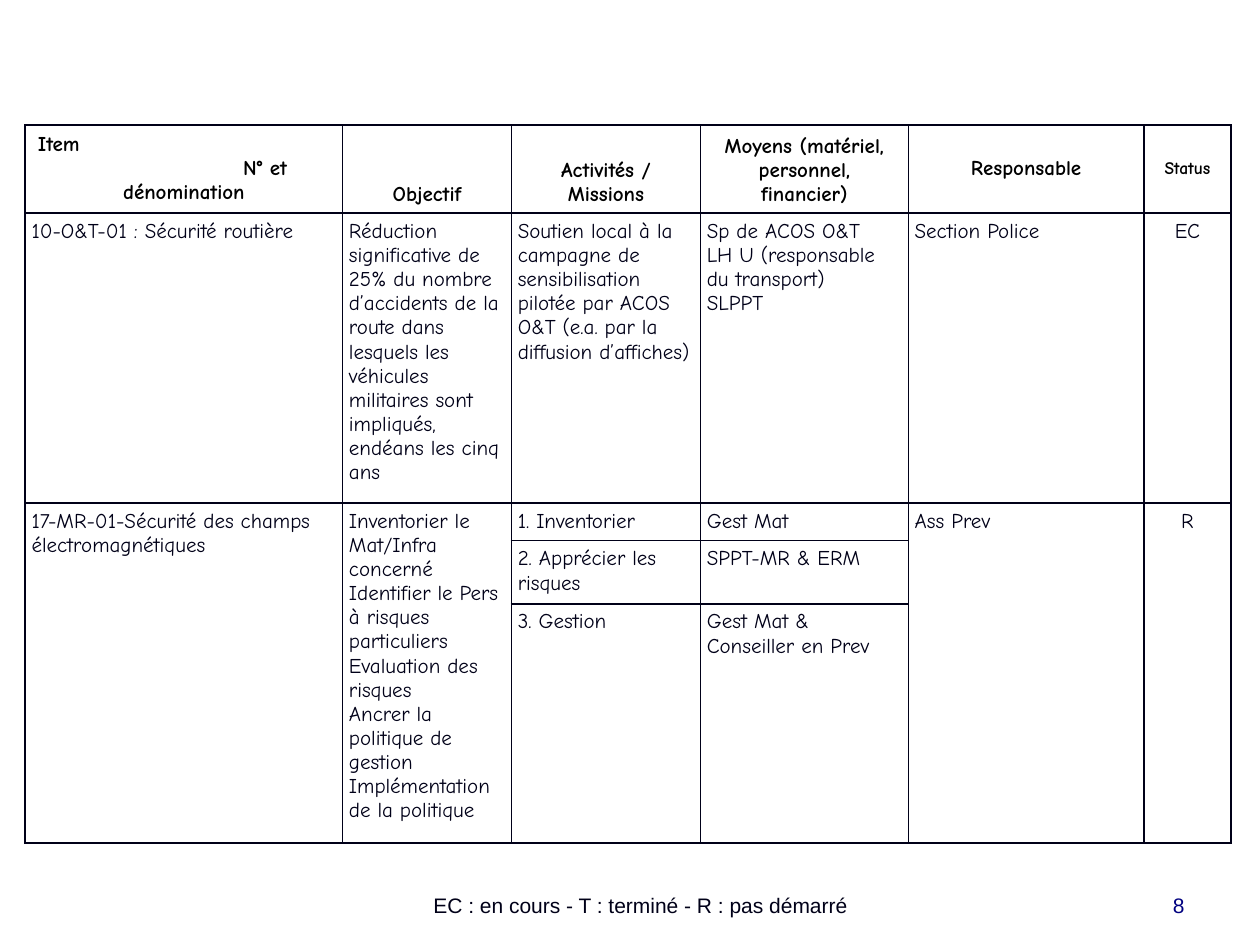
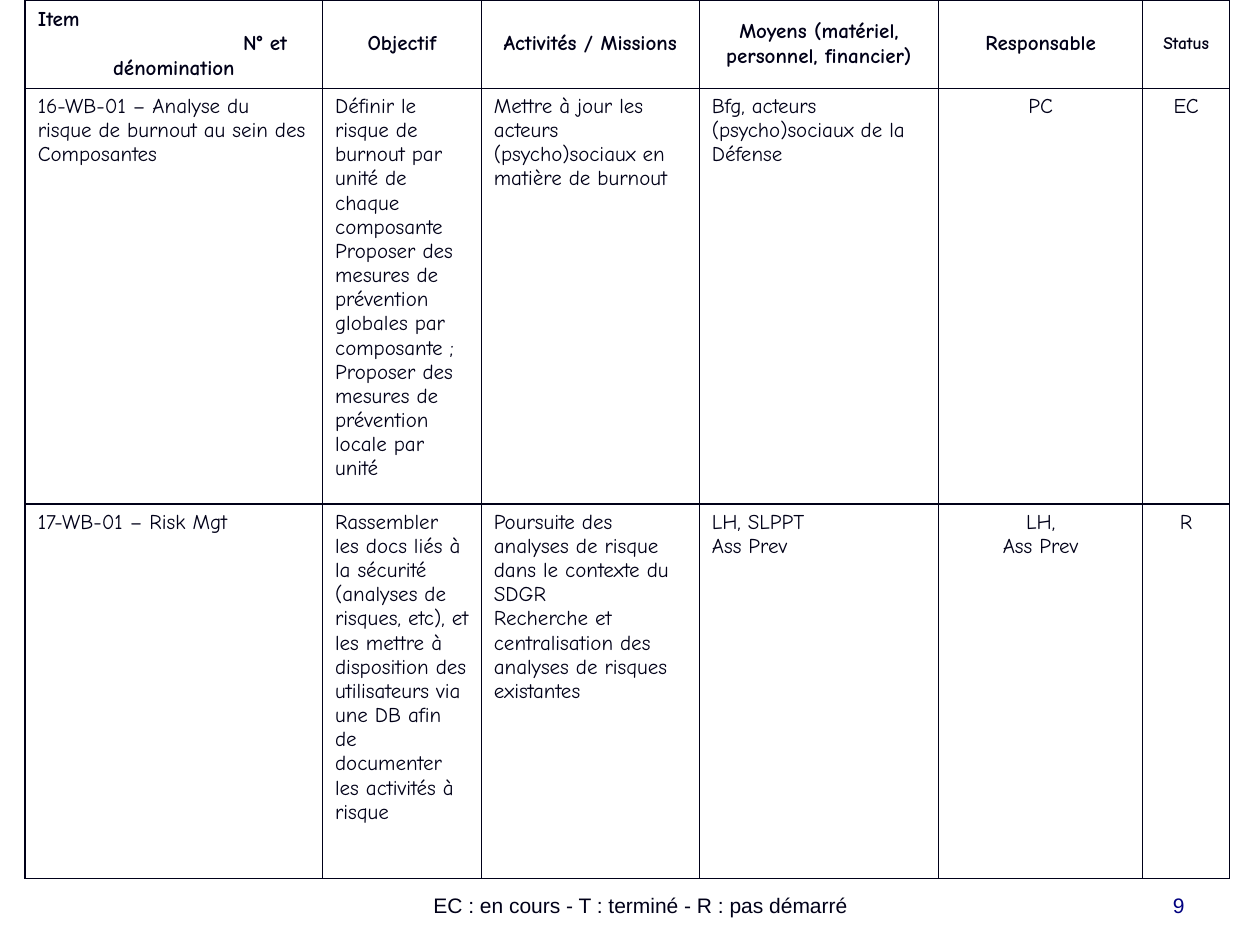
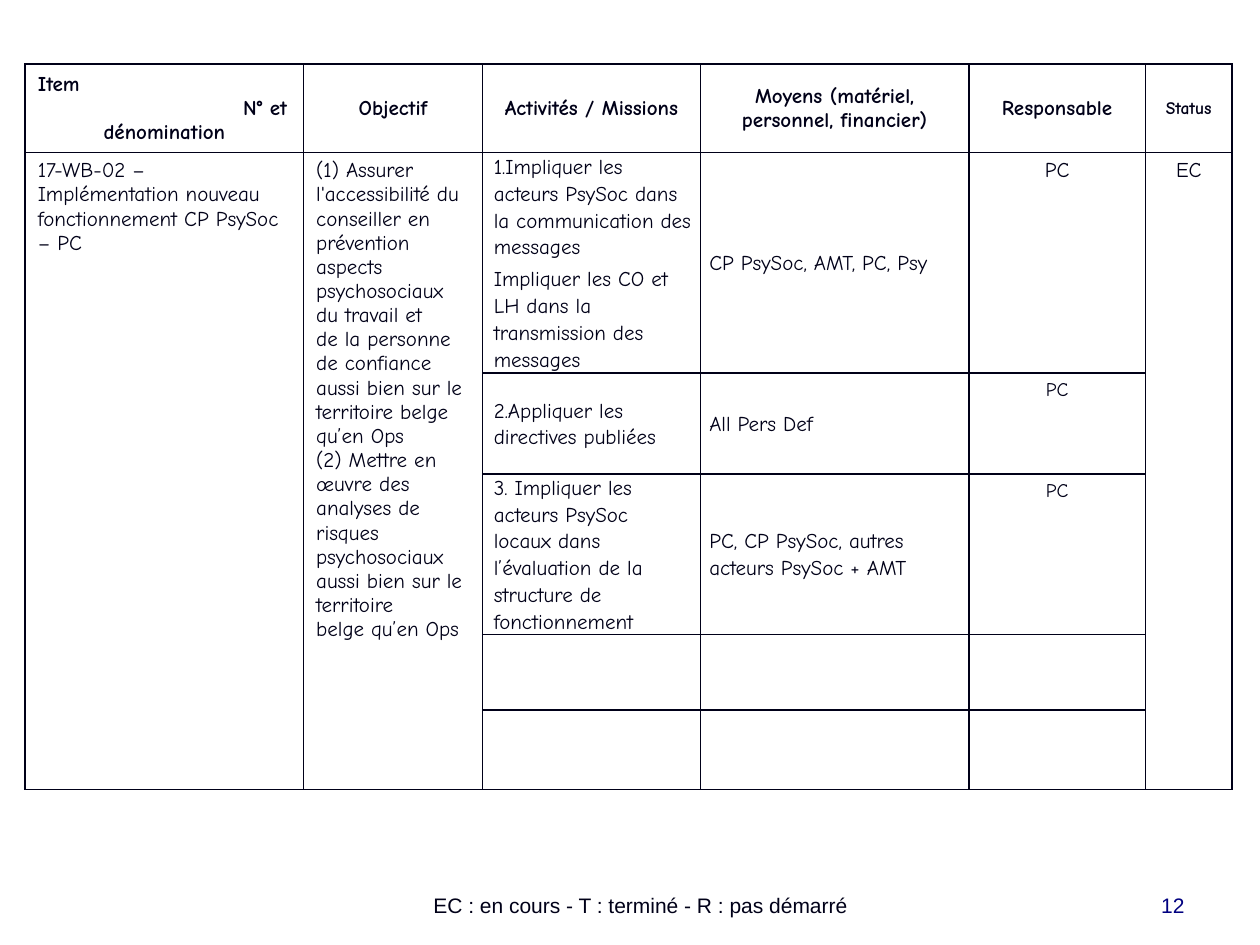
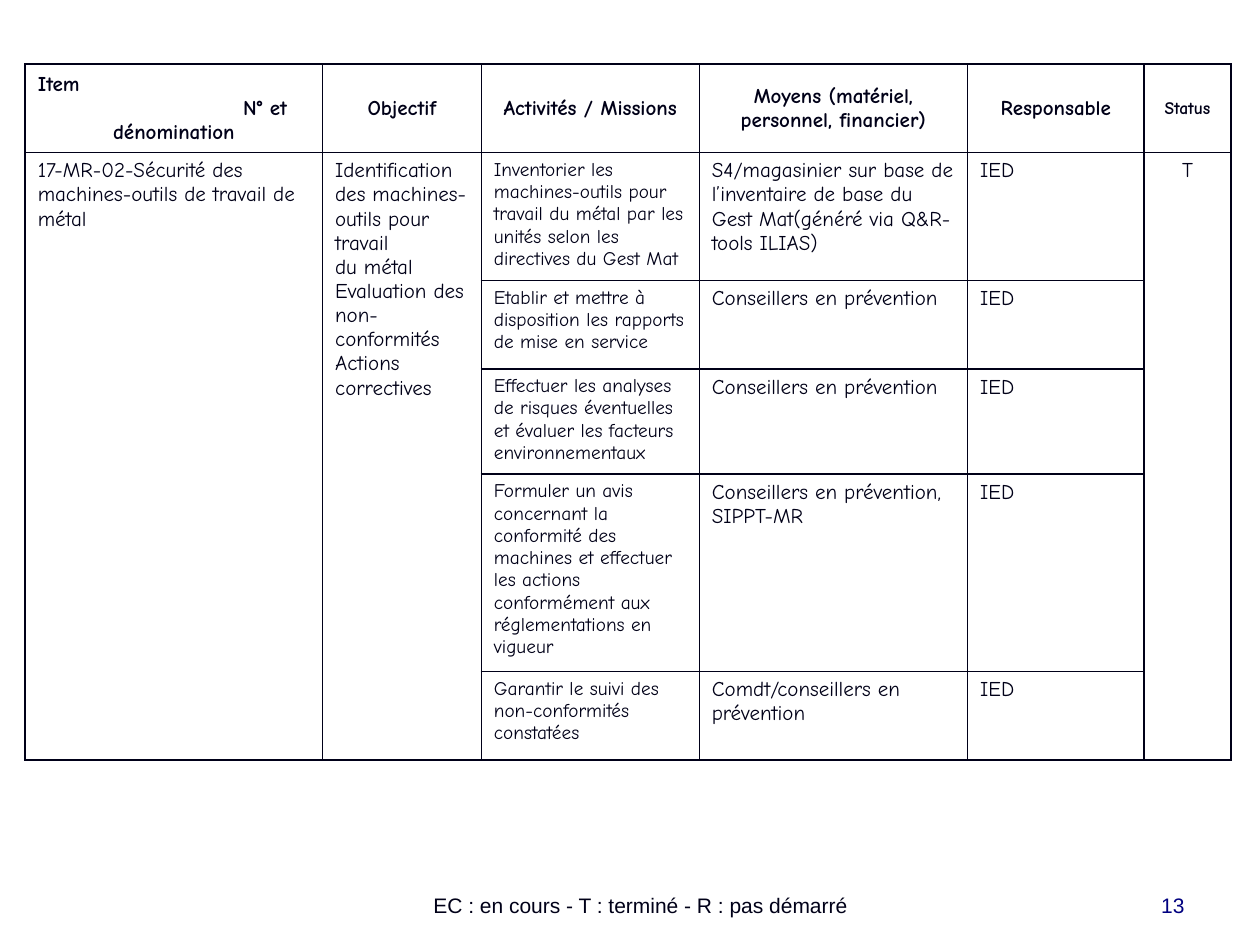
"""Build the four action-plan slides, each with one table, a legend and a page number."""
from dataclasses import dataclass, field, replace
from typing import Any, Optional

from lxml import etree
from pptx import Presentation
from pptx.dml.color import RGBColor
from pptx.enum import text
from pptx.oxml import ns
from pptx.util import Inches, Pt

INK, BLACK, NAVY, WHITE = "000018", "000000", "000080", "FFFFFF"
TABLE_FONT, FOOTER_FONT = "Comic Neue", "Arial"
LEFT, CENTER, RIGHT = text.PP_ALIGN.LEFT, text.PP_ALIGN.CENTER, text.PP_ALIGN.RIGHT
TOP, MIDDLE, BOTTOM = text.MSO_ANCHOR.TOP, text.MSO_ANCHOR.MIDDLE, text.MSO_ANCHOR.BOTTOM
TABLE_LEFT = 0.2
ITEM_INDENT = 1.63
LEGEND = "EC : en cours - T : terminé - R : pas démarré"
HEADERS = (
    "Item\nN° et\ndénomination",
    "Objectif",
    "Activités / Missions",
    "Moyens (matériel, personnel, financier)",
    "Responsable",
    "Status",
)


@dataclass(frozen=True)
class Style:
    """Describe how the text of a cell or text box looks."""

    size: float = 12
    align: Any = LEFT
    anchor: Any = TOP
    inset_x: float = 0.1
    inset_y: float = 0.05
    indent: float = 0
    leading: Optional[float] = None
    gap: float = 0
    bold: bool = False
    color: str = INK
    font: str = TABLE_FONT


BODY = Style()
CENTERED = replace(BODY, align=CENTER)
SMALL = replace(BODY, size=11)
SMALL_CENTERED = replace(CENTERED, size=11)
NARROW = replace(BODY, inset_x=0.05)
NARROW_CENTERED = replace(NARROW, align=CENTER)
LEADED = Style(anchor=MIDDLE, inset_x=0.07, inset_y=0, leading=15.3, gap=3)
LEADED_INDENTED = replace(LEADED, indent=0.02)
HEADER = Style(align=CENTER, anchor=MIDDLE, bold=True)
LEGEND_STYLE = Style(align=CENTER, anchor=BOTTOM, font=FOOTER_FONT)
PAGE_STYLE = replace(LEGEND_STYLE, align=RIGHT, color=NAVY)


@dataclass(frozen=True)
class ActionPlan:
    """Describe one slide: its page number and its table."""

    page: int
    top: float
    widths: tuple[float, ...]
    heights: tuple[float, ...]
    styles: tuple[Style, ...]
    rows: tuple[tuple[Optional[str], ...], ...]
    special: dict[tuple[int, int], Style] = field(default_factory=dict)
    header: Style = HEADER
    low_headers: tuple[int, ...] = ()


PLANS = (
    ActionPlan(
        page=8,
        top=0.99,
        widths=(2.52, 1.34, 1.5, 1.65, 1.87, 0.69),
        heights=(0.67, 2.22, 0.29, 0.49, 1.82),
        styles=(NARROW,) * 5 + (NARROW_CENTERED,),
        header=replace(HEADER, color=BLACK),
        low_headers=(1, 2, 3),
        rows=(
            (
                "10-O&T-01 : Sécurité routière",
                "Réduction significative de 25% du nombre d’accidents de la route dans "
                "lesquels les véhicules militaires sont impliqués, endéans les cinq ans",
                "Soutien local à la campagne de sensibilisation pilotée par ACOS O&T "
                "(e.a. par la diffusion d’affiches)",
                "Sp de ACOS O&T\nLH U (responsable du transport)\nSLPPT",
                "Section Police",
                "EC",
            ),
            (
                "17-MR-01-Sécurité des champs électromagnétiques",
                "Inventorier le Mat/Infra concerné\n"
                "Identifier le Pers à risques particuliers\n"
                "Evaluation des risques\n"
                "Ancrer la politique de gestion\n"
                "Implémentation de la politique",
                "1. Inventorier",
                "Gest Mat",
                "Ass Prev",
                "R",
            ),
            (None, None, "2. Apprécier les risques", "SPPT-MR & ERM", None, None),
            (None, None, "3. Gestion", "Gest Mat & Conseiller en Prev", None, None),
        ),
    ),
    ActionPlan(
        page=9,
        top=0,
        widths=(2.36, 1.26, 1.73, 1.9, 1.62, 0.69),
        heights=(0.67, 3.17, 2.97),
        styles=(BODY,) * 4 + (CENTERED,) * 2,
        rows=(
            (
                "16-WB-01 – Analyse du risque de burnout au sein des Composantes",
                "Définir le risque de burnout par unité de chaque composante Proposer des "
                "mesures de prévention globales par composante ;\n"
                "Proposer des mesures de prévention locale par unité",
                "Mettre à jour les acteurs (psycho)sociaux en matière de burnout",
                "Bfg, acteurs (psycho)sociaux de la Défense",
                "PC",
                "EC",
            ),
            (
                "17-WB-01 – Risk Mgt",
                "Rassembler les docs liés à la sécurité (analyses de risques, etc), et les "
                "mettre à disposition des utilisateurs via une DB afin de documenter les "
                "activités à risque",
                "Poursuite des analyses de risque dans le contexte du SDGR\n"
                "Recherche et centralisation des analyses de risques existantes",
                "LH, SLPPT\nAss Prev",
                "LH,\nAss Prev",
                "R",
            ),
        ),
    ),
    ActionPlan(
        page=12,
        top=0.51,
        widths=(2.21, 1.42, 1.73, 2.13, 1.4, 0.69),
        heights=(0.67, 1.75, 0.8, 1.27, 0.6, 0.63),
        styles=(BODY, BODY, LEADED_INDENTED, LEADED, CENTERED, CENTERED),
        special={(2, 4): SMALL_CENTERED, (3, 4): SMALL_CENTERED},
        rows=(
            (
                "17-WB-02 – Implémentation nouveau fonctionnement CP PsySoc – PC",
                "(1) Assurer l'accessibilité du conseiller en prévention aspects "
                "psychosociaux du travail et\n"
                "de la personne de confiance aussi bien sur le territoire belge qu’en Ops\n"
                "(2) Mettre en œuvre des analyses de risques psychosociaux aussi bien sur "
                "le territoire\n"
                "belge qu’en Ops",
                "1.Impliquer les acteurs PsySoc dans la communication des messages\n"
                "Impliquer les CO et LH dans la transmission des messages",
                "CP PsySoc, AMT, PC, Psy",
                "PC",
                "EC",
            ),
            (None, None, "2.Appliquer les directives publiées", "All Pers Def", "PC", None),
            (
                None,
                None,
                "3. Impliquer les acteurs PsySoc locaux dans l’évaluation de la structure "
                "de fonctionnement",
                "PC, CP PsySoc, autres acteurs PsySoc + AMT",
                "PC",
                None,
            ),
            (None, None, "", "", "", None),
            (None, None, "", "", "", None),
        ),
    ),
    ActionPlan(
        page=13,
        top=0.51,
        widths=(2.36, 1.26, 1.73, 2.13, 1.4, 0.69),
        heights=(0.67, 0.99, 0.7, 0.81, 1.52, 0.7),
        styles=(BODY, BODY, SMALL, BODY, BODY, CENTERED),
        rows=(
            (
                "17-MR-02-Sécurité des machines-outils de travail de métal",
                "Identification des machines-outils pour travail\n"
                "du métal\n"
                "Evaluation des non-conformités\n"
                "Actions correctives",
                "Inventorier les machines-outils pour travail du métal par les unités selon "
                "les directives du Gest Mat",
                "S4/magasinier sur base de l’inventaire de base du Gest Mat(généré via "
                "Q&R-tools ILIAS)",
                "IED",
                "T",
            ),
            (
                None,
                None,
                "Etablir et mettre à disposition les rapports de mise en service",
                "Conseillers en prévention",
                "IED",
                None,
            ),
            (
                None,
                None,
                "Effectuer les analyses de risques éventuelles et évaluer les facteurs "
                "environnementaux",
                "Conseillers en prévention",
                "IED",
                None,
            ),
            (
                None,
                None,
                "Formuler un avis concernant la conformité des machines et effectuer les "
                "actions conformément aux réglementations en vigueur",
                "Conseillers en prévention, SIPPT-MR",
                "IED",
                None,
            ),
            (
                None,
                None,
                "Garantir le suivi des non-conformités constatées",
                "Comdt/conseillers en prévention",
                "IED",
                None,
            ),
        ),
    ),
)


def rgb(color: str) -> RGBColor:
    """Turn a hex string into a colour."""
    return RGBColor.from_string(color)


def set_values(target: Any, values: dict[str, Any]) -> None:
    """Set every named attribute of an object."""
    for name, value in values.items():
        setattr(target, name, value)


def set_indent(paragraph: Any, inches: float) -> None:
    """Give a paragraph a left indent."""
    paragraph._p.get_or_add_pPr().set("marL", str(Inches(inches)))


def write_text(frame: Any, content: str, style: Style) -> None:
    """Fill a text frame, one paragraph for each line."""
    frame.text = content
    for index, paragraph in enumerate(frame.paragraphs):
        paragraph.alignment = style.align
        if style.indent:
            set_indent(paragraph, style.indent)
        if style.leading:
            paragraph.line_spacing = Pt(style.leading)
        if style.gap and index:
            set_values(paragraph, {"space_before": Pt(style.gap), "space_after": Pt(style.gap)})
        for run in paragraph.runs:
            set_values(run.font, {"name": style.font, "size": Pt(style.size), "bold": style.bold})
            run.font.color.rgb = rgb(style.color)


def add_label(slide: Any, content: str, left: float, width: float, style: Style) -> None:
    """Add one text box in the footer band."""
    shape = slide.shapes.add_textbox(Inches(left), Inches(6.83), Inches(width), Inches(0.5))
    set_values(shape.text_frame, {"word_wrap": True, "vertical_anchor": style.anchor})
    write_text(shape.text_frame, content, style)


def add_borders(cell: Any) -> None:
    """Draw a thin line on the four sides of a cell."""
    properties = cell._tc.get_or_add_tcPr()
    for side in ("lnL", "lnR", "lnT", "lnB"):
        line = etree.SubElement(properties, ns.qn(f"a:{side}"), w=str(Pt(1)))
        fill = etree.SubElement(line, ns.qn("a:solidFill"))
        etree.SubElement(fill, ns.qn("a:srgbClr"), val=INK)


def fill_cell(cell: Any, content: str, style: Style) -> None:
    """Write a cell and set its insets."""
    set_values(cell, {
        "vertical_anchor": style.anchor,
        "margin_left": Inches(style.inset_x),
        "margin_right": Inches(style.inset_x),
        "margin_top": Inches(style.inset_y),
        "margin_bottom": Inches(style.inset_y),
    })
    write_text(cell.text_frame, content, style)


def fill_header(table: Any, plan: ActionPlan) -> None:
    """Write the heading row with its stepped first cell and small last cell."""
    for column, heading in enumerate(HEADERS):
        style = replace(plan.header, anchor=BOTTOM) if column in plan.low_headers else plan.header
        if heading == "Status":
            style = replace(style, size=10)
        fill_cell(table.cell(0, column), heading, style)
    item, number, _ = table.cell(0, 0).text_frame.paragraphs
    item.alignment = number.alignment = LEFT
    set_indent(number, ITEM_INDENT)
    table.cell(0, len(HEADERS) - 1)._tc.get_or_add_tcPr().set("vert", "eaVert")


def merge_down(table: Any, plan: ActionPlan, row: int, column: int) -> None:
    """Merge a cell with the unlisted cells below it."""
    last = row
    while last < len(plan.rows) and plan.rows[last][column] is None:
        last += 1
    if last > row:
        table.cell(row, column).merge(table.cell(last, column))


def add_plan_table(slide: Any, plan: ActionPlan) -> None:
    """Add the table of one action plan."""
    frame = slide.shapes.add_table(
        len(plan.heights), len(plan.widths), Inches(TABLE_LEFT), Inches(plan.top),
        Inches(sum(plan.widths)), Inches(sum(plan.heights)),
    )
    table = frame.table
    set_values(table, {"first_row": False, "horz_banding": False})
    for column, width in zip(table.columns, plan.widths):
        column.width = Inches(width)
    for row, height in zip(table.rows, plan.heights):
        row.height = Inches(height)
    for cell in table.iter_cells():
        add_borders(cell)
        cell.fill.solid()
        cell.fill.fore_color.rgb = rgb(WHITE)
    fill_header(table, plan)
    for row, contents in enumerate(plan.rows, start=1):
        for column, content in enumerate(contents):
            if content is not None:
                style = plan.special.get((row, column), plan.styles[column])
                fill_cell(table.cell(row, column), content, style)
                merge_down(table, plan, row, column)


def main() -> None:
    """Build and save the presentation."""
    presentation = Presentation()
    set_values(presentation, {"slide_width": Inches(10), "slide_height": Inches(7.5)})
    for plan in PLANS:
        slide = presentation.slides.add_slide(presentation.slide_layouts[6])
        add_label(slide, LEGEND, 2.33, 5.51, LEGEND_STYLE)
        add_plan_table(slide, plan)
        add_label(slide, str(plan.page), 7.17, 2.33, PAGE_STYLE)
    presentation.save("out.pptx")


if __name__ == "__main__":
    main()
